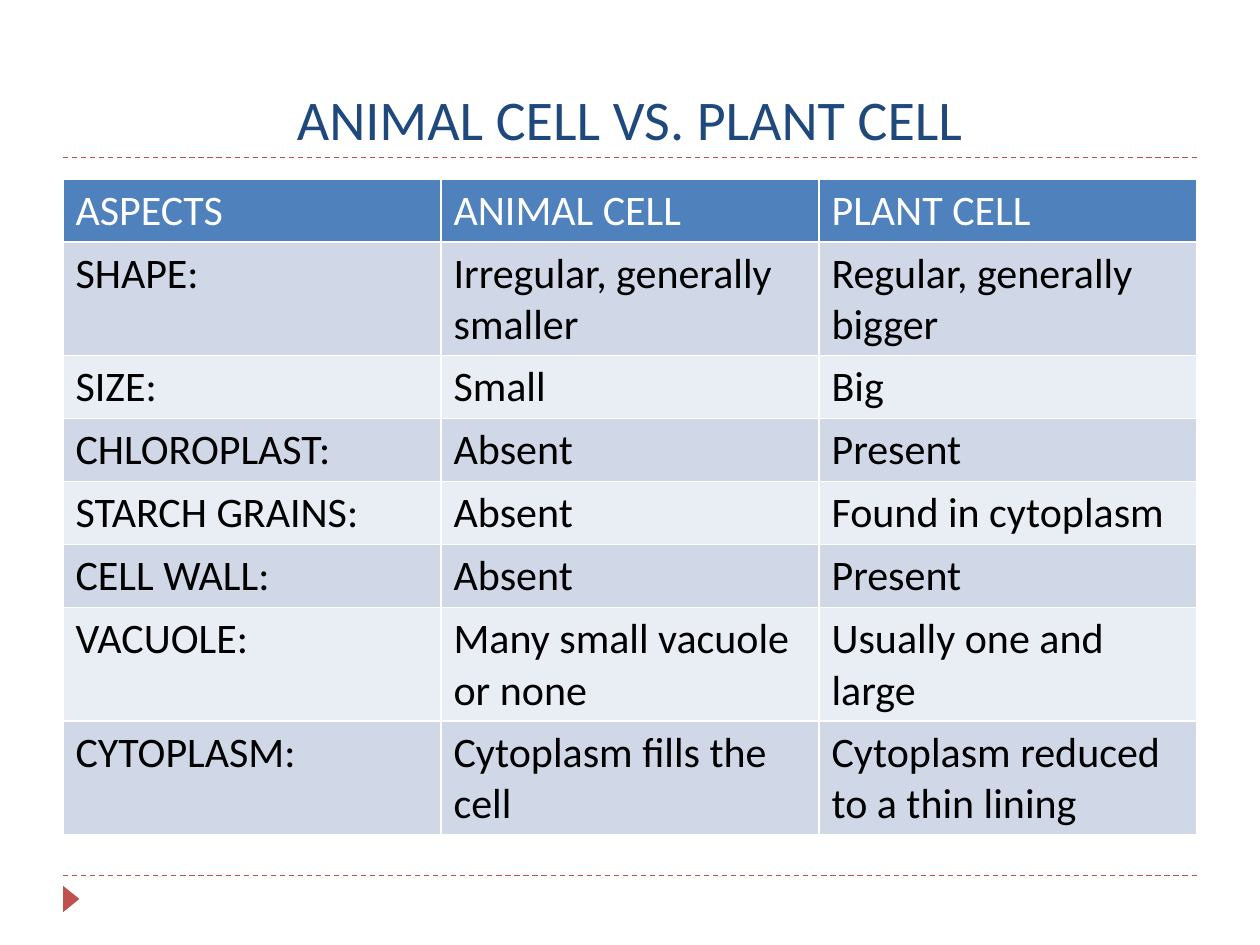
from lxml import etree
from pptx import Presentation
from pptx.dml.color import RGBColor
from pptx.enum import dml, shapes, text
from pptx.oxml import ns
from pptx.util import Pt

FONT = "Calibri"
NAVY, BLUE, RED, WHITE, BLACK = "1F497D", "4F81BD", "C0504D", "FFFFFF", "000000"
BANDS = ("D0D8E8", "E9EDF4")
LEFT, WIDTH = 36, 648
ROW_HEIGHT = 29.2
ROWS = [
    ("ASPECTS", "ANIMAL CELL", "PLANT CELL"),
    ("SHAPE:", "Irregular, generally smaller", "Regular, generally bigger"),
    ("SIZE:", "Small", "Big"),
    ("CHLOROPLAST:", "Absent", "Present"),
    ("STARCH GRAINS:", "Absent", "Found in cytoplasm"),
    ("CELL WALL:", "Absent", "Present"),
    ("VACUOLE:", "Many small vacuole or none", "Usually one and large"),
    ("CYTOPLASM:", "Cytoplasm fills the cell", "Cytoplasm reduced to a thin lining"),
]


def paint(target, color):
    target.solid()
    target.fore_color.rgb = RGBColor.from_string(color)


def write(para, content, size, color):
    span = para.add_run()
    span.text = content
    for name, value in {"name": FONT, "size": Pt(size)}.items():
        setattr(span.font, name, value)
    paint(span.font.fill, color)


def add_rule(page, top):
    """Draw a dashed line across the content width."""
    rule = page.shapes.add_connector(
        shapes.MSO_CONNECTOR.STRAIGHT, Pt(LEFT), Pt(top), Pt(LEFT + WIDTH), Pt(top))
    paint(rule.line.fill, RED)
    rule.line.width = Pt(0.75)
    rule.line.dash_style = dml.MSO_LINE.DASH
    etree.SubElement(rule._element.spPr, ns.qn("a:effectLst"))


def add_marker(page):
    marker = page.shapes.add_shape(
        shapes.MSO_SHAPE.ISOSCELES_TRIANGLE, Pt(33.12), Pt(509.04), Pt(15.12), Pt(9.36))
    marker.rotation = 90
    marker.shadow.inherit = False
    paint(marker.fill, RED)
    marker.line.fill.background()


def add_title(page, content):
    box = page.shapes.add_textbox(Pt(LEFT), Pt(12.24), Pt(WIDTH), Pt(77.76))
    frame = box.text_frame
    frame.word_wrap = True
    frame.vertical_anchor = text.MSO_ANCHOR.BOTTOM
    para = frame.paragraphs[0]
    para.alignment = text.PP_ALIGN.CENTER
    write(para, content, 32, NAVY)


def add_borders(cell, color, width):
    """Line all four sides; borders must precede the fill in the cell's XML."""
    props = cell._tc.get_or_add_tcPr()
    for index, side in enumerate(("lnL", "lnR", "lnT", "lnB")):
        border = etree.Element(ns.qn(f"a:{side}"), w=str(Pt(width)))
        fill = etree.SubElement(border, ns.qn("a:solidFill"))
        etree.SubElement(fill, ns.qn("a:srgbClr"), val=color)
        props.insert(index, border)


def add_comparison(page):
    holder = page.shapes.add_table(
        len(ROWS), len(ROWS[0]), Pt(LEFT), Pt(102.24), Pt(WIDTH), Pt(374.4))
    table = holder.table
    for row_index, values in enumerate(ROWS):
        table.rows[row_index].height = Pt(ROW_HEIGHT)
        header = row_index == 0
        fill = BLUE if header else BANDS[(row_index - 1) % 2]
        for column, value in enumerate(values):
            cell = table.cell(row_index, column)
            paint(cell.fill, fill)
            add_borders(cell, WHITE, 1)
            write(cell.text_frame.paragraphs[0], value, 24, WHITE if header else BLACK)
            cell.text_frame.paragraphs[0].runs[0].font.bold = False
    holder.height = Pt(374.4)


def main():
    deck = Presentation()
    deck.slide_width, deck.slide_height = Pt(720), Pt(540)
    page = deck.slides.add_slide(deck.slide_layouts[6])
    paint(page.background.fill, WHITE)
    for top in (500.4, 90):
        add_rule(page, top)
    add_marker(page)
    add_title(page, "ANIMAL CELL VS. PLANT CELL")
    add_comparison(page)
    deck.save("out.pptx")


if __name__ == "__main__":
    main()
